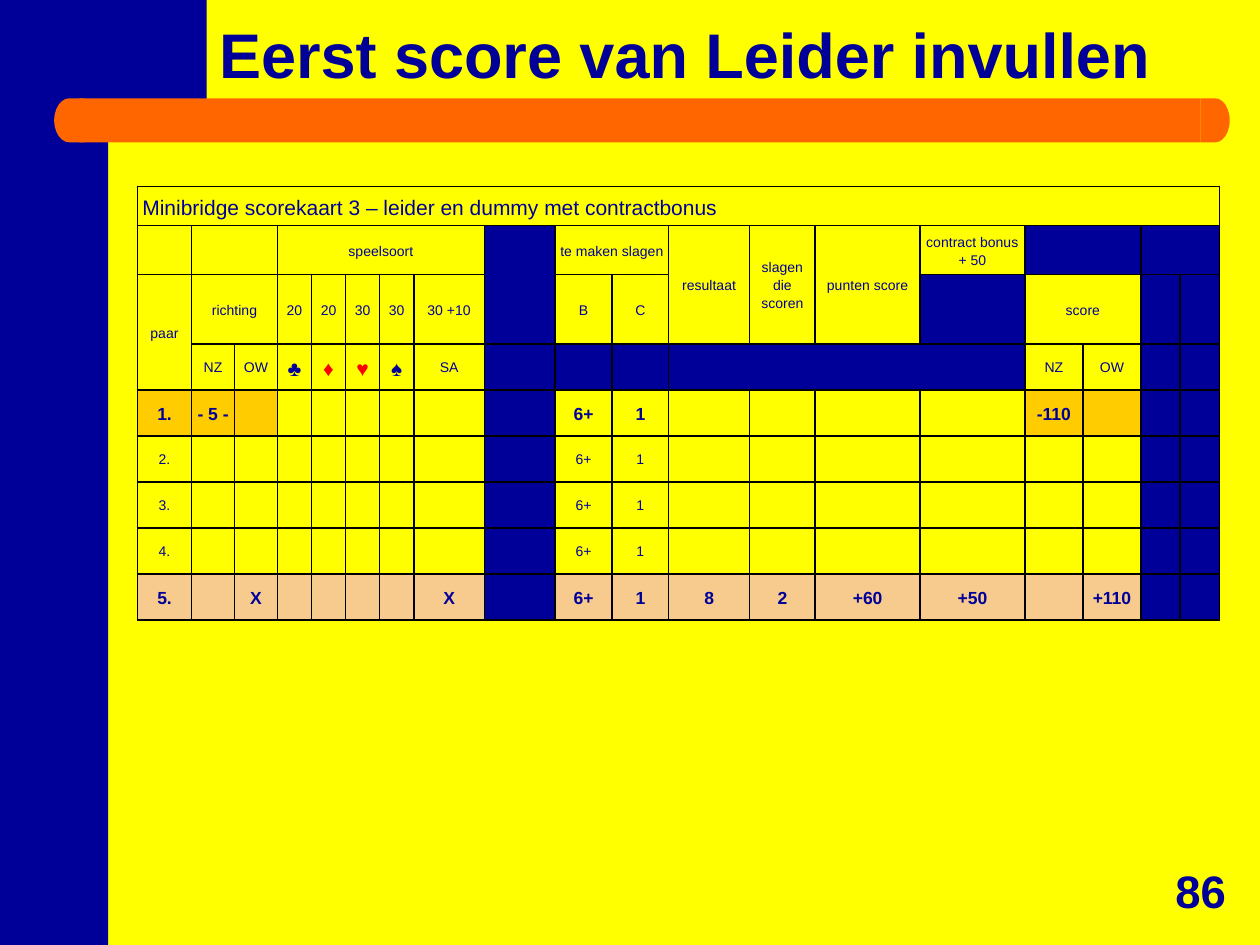
from collections import namedtuple

from lxml.etree import SubElement
from pptx import Presentation
from pptx.dml.color import RGBColor
from pptx.enum.shapes import MSO_SHAPE as Shape
from pptx.enum.text import MSO_ANCHOR as Anchor, PP_ALIGN as Align
from pptx.oxml.ns import qn
from pptx.util import Inches, Pt

NAVY = RGBColor(0x00, 0x00, 0x99)
YELLOW = RGBColor(0xFF, 0xFF, 0x00)
ORANGE = RGBColor(0xFF, 0x66, 0x00)
GOLD = RGBColor(0xFF, 0xCC, 0x00)
PEACH = RGBColor(0xF7, 0xCA, 0x8D)
RED = RGBColor(0xFF, 0x00, 0x00)
BLACK = RGBColor(0x00, 0x00, 0x00)
FONT = "Arial"

Box = namedtuple("Box", "left top width height")

COLUMN_WIDTHS = [0.43, 0.34, 0.34, 0.27, 0.27, 0.27, 0.27, 0.56, 0.56, 0.45,
                 0.45, 0.64, 0.52, 0.83, 0.83, 0.46, 0.46, 0.31, 0.31]
HEADER_HEIGHTS = [0.31, 0.39, 0.55]
ROW_COUNT = 9

SPANS = [(0, 0, 1, 19), (1, 1, 1, 2), (1, 3, 1, 5), (1, 8, 2, 1), (1, 9, 1, 2),
         (1, 11, 2, 1), (1, 12, 2, 1), (1, 13, 2, 1), (1, 17, 1, 2),
         (2, 0, 2, 1), (2, 1, 1, 2), (2, 15, 1, 2)]

CARD_TITLE = "Minibridge scorekaart 3 – leider en dummy met contractbonus"
LABELS = [
    {0: CARD_TITLE},
    {3: "speelsoort", 9: "te maken slagen", 11: "resultaat",
     12: "slagen die scoren", 13: "punten score", 14: "contract bonus\n+ 50"},
    {0: "paar", 1: "richting", 3: "20", 4: "20", 5: "30", 6: "30",
     7: "30 +10", 9: "B", 10: "C", 15: "score"},
    {1: "NZ", 2: "OW", 3: "♣", 4: "♦", 5: "♥", 6: "♠", 7: "SA",
     15: "NZ", 16: "OW"},
    {1: "- 5 -", 15: "-110"},
    {},
    {},
    {},
    {2: "X", 7: "X", 11: "8", 12: "2", 13: "+60", 14: "+50", 16: "+110"},
]
NAVY_HEADER_CELLS = {(1, 15), (1, 16), (2, 14)} | {(3, col) for col in range(9, 15)}
OPEN_RUNS = [(1, 15, 16), (3, 11, 14)]
GOLD_COLUMNS = {0, 1, 2, 15, 16}
FIRST_PAIR, LAST_PAIR = 4, 8


def add_run(paragraph, text, size, color=NAVY, bold=False):
    """Append one styled run to a paragraph."""
    run = paragraph.add_run()
    run.text = text
    run.font.name = FONT
    run.font.size = Pt(size)
    run.font.bold = bold
    run.font.color.rgb = color


def paint(shape, color):
    """Give a shape a flat fill with no line or shadow."""
    shape.shadow.inherit = False
    shape.fill.solid()
    shape.fill.fore_color.rgb = color
    shape.line.fill.background()


def add_block(slide, kind, box, color):
    """Place one flat preset shape in the box."""
    block = slide.shapes.add_shape(kind, *map(Inches, box))
    paint(block, color)
    return block


def add_heading(slide, box, text, size, align, spacing):
    """Place a bold line at the bottom of the box."""
    frame = slide.shapes.add_textbox(*map(Inches, box)).text_frame
    frame.word_wrap = True
    frame.vertical_anchor = Anchor.BOTTOM
    paragraph = frame.paragraphs[0]
    paragraph.alignment = align
    paragraph.line_spacing = spacing
    add_run(paragraph, text, size, bold=True)


def add_corner(slide, box):
    """Draw the top corner block with its narrow tail in the box."""
    right, shoulder = box.left + box.width, box.top + 0.83
    tail, bottom = box.left + 0.15, box.top + box.height
    outline = [(right, box.top), (right, shoulder), (0.56, shoulder),
               (0.52, 0.85), (0.48, 0.92), (0.44, 1.04), (tail, 1.16),
               (tail, bottom), (box.left, bottom), (box.left, box.top)]
    points = [(Inches(x), Inches(y)) for x, y in outline]
    builder = slide.shapes.build_freeform(*points[0])
    builder.add_line_segments(points[1:], close=True)
    paint(builder.convert_to_shape(), NAVY)


def add_bar(slide, box):
    """Draw the orange bar with a rounded cap at both ends of the box."""
    cap = 0.23
    right = box.left + box.width - cap
    middle = Box(box.left + 0.2, box.top, right - box.left - 0.2, box.height)
    add_block(slide, Shape.RECTANGLE, middle, ORANGE)
    left_cap = add_block(slide, Shape.FLOWCHART_DELAY, box._replace(width=0.24), ORANGE)
    left_cap.rotation = 180
    add_block(slide, Shape.FLOWCHART_DELAY, box._replace(left=right, width=cap), ORANGE)


def label_for(row, col):
    """Return the text of a cell."""
    if row >= FIRST_PAIR:
        fixed = {0: f"{row - FIRST_PAIR + 1}.", 9: "6+", 10: "1"}
        if col in fixed:
            return fixed[col]
    return LABELS[row].get(col, "")


def fill_for(row, col):
    """Return the fill colour of a cell, or None when it is clear."""
    if row and (col in (8, 17, 18) or (row, col) in NAVY_HEADER_CELLS):
        return NAVY
    if row == FIRST_PAIR and col in GOLD_COLUMNS:
        return GOLD
    return PEACH if row == LAST_PAIR else None


def add_borders(cell, row, col):
    """Rule the cell in black, leaving joined navy cells open inside."""
    runs = [(first, last) for line, first, last in OPEN_RUNS if line == row]
    open_left = any(first < col <= last for first, last in runs)
    open_right = any(first <= col < last for first, last in runs)
    properties = cell._tc.get_or_add_tcPr()
    for side, is_open in (("L", open_left), ("R", open_right), ("T", False), ("B", False)):
        line = SubElement(properties, qn(f"a:ln{side}"), w=str(Pt(1)))
        if is_open:
            SubElement(line, qn("a:noFill"))
        else:
            solid = SubElement(line, qn("a:solidFill"))
            SubElement(solid, qn("a:srgbClr"), val=str(BLACK))


def fill_cell(cell, row, col):
    """Set the borders, fill and text of one cell."""
    add_borders(cell, row, col)
    color = fill_for(row, col)
    if color is None:
        cell.fill.background()
    else:
        cell.fill.solid()
        cell.fill.fore_color.rgb = color
    cell.margin_left = cell.margin_right = Inches(0.04)
    cell.margin_top = cell.margin_bottom = 0
    cell.vertical_anchor = Anchor.MIDDLE
    text = label_for(row, col)
    if not text:
        return
    bold = row in (FIRST_PAIR, LAST_PAIR)
    size = 12 if row == 0 or text in "♣♦♥♠" else 10 if bold else 8
    for index, line in enumerate(text.split("\n")):
        frame = cell.text_frame
        paragraph = frame.add_paragraph() if index else frame.paragraphs[0]
        paragraph.alignment = Align.CENTER if row else Align.LEFT
        paragraph.line_spacing = 1.15
        add_run(paragraph, line, size, RED if line in "♦♥" else NAVY, bold)


def add_scorecard(slide, box):
    """Build the score table inside the box."""
    frame = slide.shapes.add_table(ROW_COUNT, len(COLUMN_WIDTHS), *map(Inches, box))
    table = frame.table
    table.first_row = table.horz_banding = False
    scale = box.width / sum(COLUMN_WIDTHS)
    for column, width in zip(table.columns, COLUMN_WIDTHS):
        column.width = Inches(width * scale)
    pair_rows = ROW_COUNT - len(HEADER_HEIGHTS)
    pair_height = (box.height - sum(HEADER_HEIGHTS)) / pair_rows
    for line, height in zip(table.rows, HEADER_HEIGHTS + [pair_height] * pair_rows):
        line.height = Inches(height)
    for row in range(ROW_COUNT):
        for col in range(len(COLUMN_WIDTHS)):
            fill_cell(table.cell(row, col), row, col)
    for row, col, down, across in SPANS:
        table.cell(row, col).merge(table.cell(row + down - 1, col + across - 1))


def main():
    """Build the slide and save it."""
    deck = Presentation()
    deck.slide_width, deck.slide_height = Inches(10), Inches(7.5)
    slide = deck.slides.add_slide(deck.slide_layouts[6])
    slide.background.fill.solid()
    slide.background.fill.fore_color.rgb = YELLOW
    add_block(slide, Shape.RECTANGLE, Box(0, 0, 0.86, 7.5), NAVY)
    add_corner(slide, Box(0.28, 0, 1.36, 1.28))
    add_bar(slide, Box(0.43, 0.78, 9.33, 0.35))
    add_heading(slide, Box(9.06, 6.8, 0.94, 0.53), "86", 26, Align.CENTER, 1.0)
    add_heading(slide, Box(1.64, 0, 7.89, 0.78), "Eerst score van Leider invullen",
                36, Align.LEFT, 0.9)
    add_scorecard(slide, Box(1.09, 1.48, 8.59, 3.44))
    deck.save("out.pptx")


if __name__ == "__main__":
    main()
